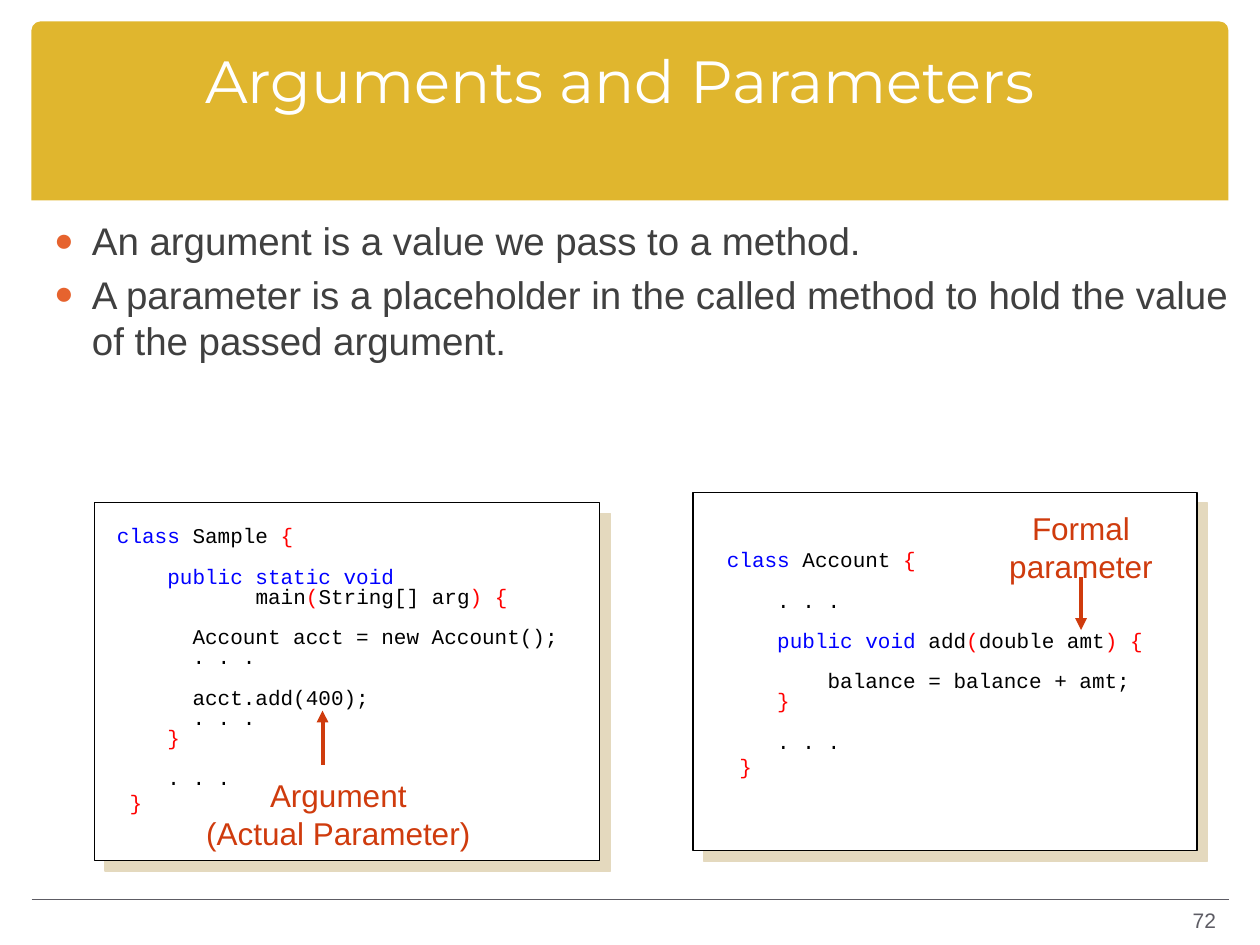
from dataclasses import dataclass

from lxml import etree
from pptx import Presentation
from pptx.dml.color import RGBColor
from pptx.enum.shapes import MSO_CONNECTOR, MSO_SHAPE
from pptx.enum.text import MSO_ANCHOR, MSO_AUTO_SIZE, PP_ALIGN
from pptx.oxml.ns import qn
from pptx.util import Inches, Pt

STRAIGHT = MSO_CONNECTOR.STRAIGHT
RECTANGLE, HEADER = MSO_SHAPE.RECTANGLE, MSO_SHAPE.ROUND_2_SAME_RECTANGLE
TOP, MIDDLE = MSO_ANCHOR.TOP, MSO_ANCHOR.MIDDLE
LEFT, CENTER, RIGHT = PP_ALIGN.LEFT, PP_ALIGN.CENTER, PP_ALIGN.RIGHT
NO_FIT = MSO_AUTO_SIZE.NONE


@dataclass(frozen=True)
class Theme:
    """Colours, fonts and type styles of the slide."""
    gold: str = "E0B62E"
    white: str = "FFFFFF"
    black: str = "000000"
    gray: str = "5D5C64"
    accent: str = "CF3B0D"
    bullet: str = "E6632E"
    shadow: str = "E4D9BE"
    keyword: str = "0000FF"
    brace: str = "FF0000"
    title: tuple = ("Montserrat", 34, "FFFFFF")
    body: tuple = ("Arial", 22, "404040")
    label: tuple = ("Arial", 18, "CF3B0D")
    number: tuple = ("Arial", 12, "5D5C64")
    code_font: str = "Courier New"
    code_size: float = 12
    code_gap: float = 11.5
    code_column: float = 0.1


def apply(target, values):
    """Set each named attribute on the target."""
    for name, value in values.items():
        setattr(target, name, value)


def child(parent, tag, **attributes):
    """Append a DrawingML element to the parent."""
    return etree.SubElement(parent, qn(tag), attributes)


class SlideBuilder:
    """Draws styled elements on the current slide."""

    def __init__(self, page, theme):
        self.page, self.theme, self.target = page, theme, page.shapes

    def start_group(self):
        """Send the next elements to a new group."""
        self.target = self.page.shapes.add_group_shape().shapes

    def add_span(self, para, text, style):
        """Add one styled run to a paragraph."""
        name, size, color = style
        span = para.add_run()
        span.text = text
        apply(span.font, {"name": name, "size": Pt(size)})
        span.font.color.rgb = RGBColor.from_string(color)

    def paragraphs(self, frame, count):
        """Yield the first paragraph, then new ones up to the count."""
        yield frame.paragraphs[0]
        for _ in range(count - 1):
            yield frame.add_paragraph()

    def placeholder(self, box, place, lines, style, align, anchor):
        """Move and fill a template placeholder."""
        apply(box, dict(zip(("left", "top", "width", "height"), map(Inches, place))))
        apply(box.text_frame, {"vertical_anchor": anchor, "auto_size": NO_FIT})
        paras = list(self.paragraphs(box.text_frame, len(lines)))
        for para, line in zip(paras, lines):
            para.alignment = align
            self.add_span(para, line, style)
        return paras

    def bullets(self, box, place, lines):
        """Fill the body placeholder with a bulleted list."""
        for para in self.placeholder(box, place, lines, self.theme.body, LEFT, TOP):
            props = para._p.get_or_add_pPr()
            props.set("marL", str(Inches(0.3)))
            props.set("indent", str(Inches(-0.3)))
            child(child(props, "a:buClr"), "a:srgbClr", val=self.theme.bullet)
            child(props, "a:buSzPct", val="85000")
            child(props, "a:buFont", typeface="Arial")
            child(props, "a:buChar", char="●")

    def shape(self, kind, place, fill):
        """Draw a plain filled shape without an outline."""
        box = self.target.add_shape(kind, *map(Inches, place))
        box.shadow.inherit = False
        box.fill.solid()
        box.fill.fore_color.rgb = RGBColor.from_string(fill)
        box.line.fill.background()
        return box

    def header(self, place):
        """Draw the title band behind everything else."""
        band = self.shape(HEADER, place, self.theme.gold)
        band.adjustments[0], band.adjustments[1] = 0.05, 0
        band.element.getparent().insert(2, band.element)

    def panel(self, place):
        """Draw an outlined panel with a hard shadow."""
        box = self.shape(RECTANGLE, place, self.theme.white)
        box.line.color.rgb = RGBColor.from_string(self.theme.black)
        box.line.width = Pt(0.75)
        effects = box.element.spPr.find(qn("a:effectLst"))
        shadow = child(effects, "a:outerShdw", blurRad="0", dist=str(Pt(8.5)),
                       dir="2700000", algn="ctr", rotWithShape="0")
        child(shadow, "a:srgbClr", val=self.theme.shadow)

    def line(self, start, end, color, width, arrow=False):
        """Draw a straight line, with an arrowhead if asked."""
        link = self.target.add_connector(STRAIGHT, *map(Inches, start + end))
        link.line.color.rgb = RGBColor.from_string(color)
        link.line.width = Pt(width)
        if arrow:
            child(link.element.spPr.find(qn("a:ln")), "a:tailEnd", type="triangle")
        child(link.element.spPr, "a:effectLst")

    def frame(self, place, **values):
        """Add a wrapping text box and return its frame."""
        frame = self.target.add_textbox(*map(Inches, place)).text_frame
        apply(frame, {"word_wrap": True, **values})
        return frame

    def label(self, place, lines, style, align=CENTER, **values):
        """Add a text box with one style throughout."""
        frame = self.frame(place, **values)
        for para, text in zip(self.paragraphs(frame, len(lines)), lines):
            para.alignment = align
            self.add_span(para, text, style)

    def code(self, place, lines):
        """Add a code listing indented by character columns."""
        frame = self.frame(place, margin_right=0)
        paras = list(self.paragraphs(frame, len(lines)))
        for para, (column, blanks, spans) in zip(paras, lines):
            apply(para, {"alignment": LEFT, "line_spacing": 0.8,
                         "space_before": Pt(blanks * self.theme.code_gap)})
            props = para._p.get_or_add_pPr()
            props.set("marL", str(Inches(column * self.theme.code_column)))
            props.set("indent", "0")
            for text, color in spans:
                self.add_span(para, text, (self.theme.code_font, self.theme.code_size, color))
        paras[-1].line_spacing = 1.0


def main():
    """Build and save the slide."""
    theme = Theme()
    plain, keyword, brace = theme.black, theme.keyword, theme.brace
    deck = Presentation()
    apply(deck, {"slide_width": Inches(10), "slide_height": Inches(7.5)})
    page = deck.slides.add_slide(deck.slide_layouts[1])
    builder = SlideBuilder(page, theme)

    builder.header((0.25, 0.17, 9.5, 1.42))
    builder.line((0.25, 7.14), (9.75, 7.14), theme.gray, 1)
    builder.placeholder(page.shapes.title, (0.67, 0.17, 8.5, 0.92),
                        ["Arguments and Parameters"], theme.title, CENTER, MIDDLE)
    builder.bullets(page.placeholders[1], (0.33, 1.67, 9.67, 4.5), [
        "An argument is a value we pass to a method.",
        "A parameter is a placeholder in the called method to hold the value "
        "of the passed argument."])
    builder.label((7.42, 7.13, 2.33, 0.35), ["72"], theme.number, RIGHT,
                  vertical_anchor=MIDDLE)

    dots, close = [(". . .", plain)], [("}", brace)]
    builder.start_group()
    builder.panel((0.75, 3.99, 4.01, 2.84))
    builder.code((0.83, 4.14, 3.73, 2.38), [
        (0, 0, [("class", keyword), (" Sample ", plain), ("{", brace)]),
        (4, 1, [("public static void", keyword)]),
        (11, 0, [("main", plain), ("(", brace), ("String[] arg", plain), (") {", brace)]),
        (6, 1, [("Account acct = new Account();", plain)]),
        (6, 0, dots),
        (6, 1, [("acct.add(400);", plain)]),
        (6, 0, dots),
        (4, 0, close),
        (4, 1, dots),
        (1, 0, close)])
    builder.line((2.56, 6.07), (2.56, 5.64), theme.accent, 2.25, arrow=True)
    builder.label((1.53, 6.11, 2.31, 0.7), ["Argument", "(Actual Parameter)"],
                  theme.label, margin_left=0, margin_right=0)

    builder.start_group()
    builder.panel((5.5, 3.91, 4, 2.84))
    builder.code((5.67, 4.33, 3.52, 1.9), [
        (0, 0, [("class", keyword), (" Account ", plain), ("{", brace)]),
        (4, 1, dots),
        (4, 1, [("public void", keyword), (" add", plain), ("(", brace),
                ("double amt", plain), (") {", brace)]),
        (8, 1, [("balance = balance + amt;", plain)]),
        (4, 0, close),
        (4, 1, dots),
        (1, 0, close)])
    builder.line((8.58, 4.58), (8.58, 5), theme.accent, 2.25, arrow=True)
    builder.label((7.91, 3.99, 1.34, 0.7), ["Formal", "parameter"],
                  theme.label, margin_left=0, margin_right=0)
    deck.save("out.pptx")


if __name__ == "__main__":
    main()
